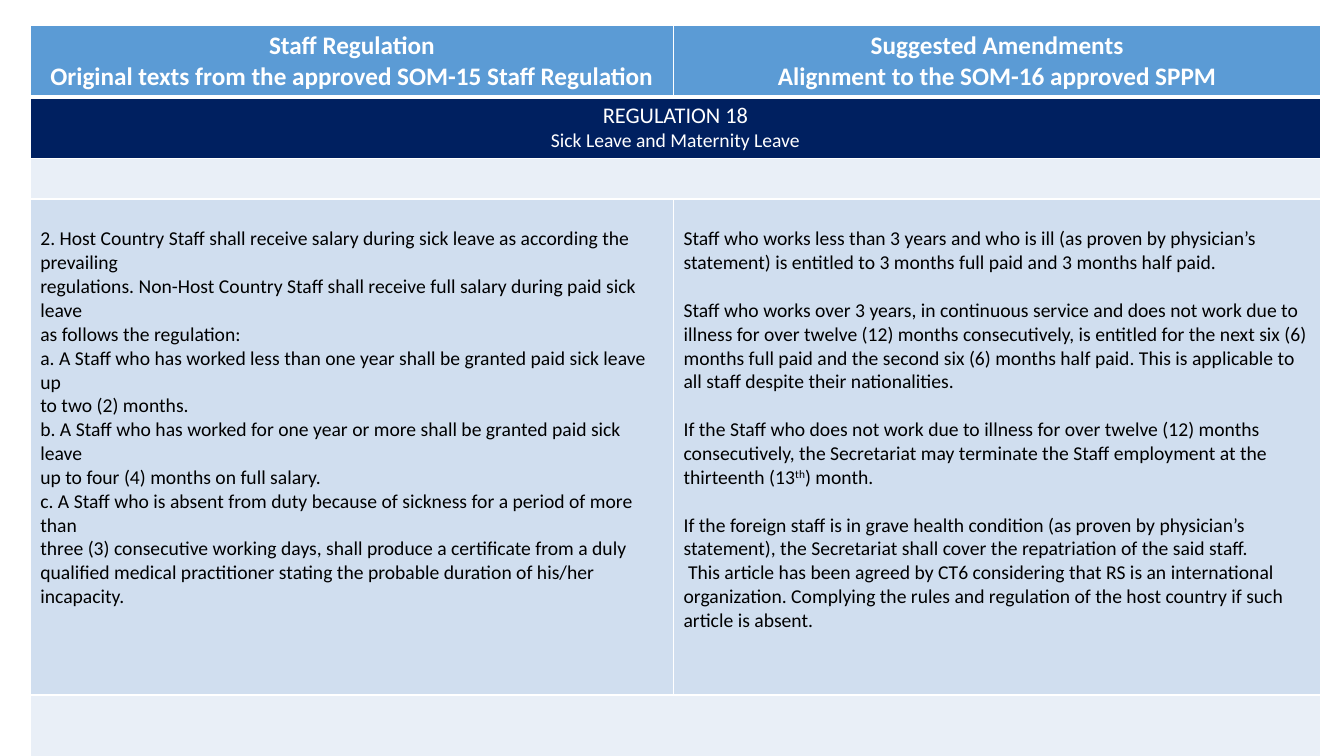
from dataclasses import dataclass
from lxml.etree import SubElement
from pptx import Presentation
from pptx.dml.color import RGBColor
from pptx.enum.text import PP_ALIGN as Align
from pptx.oxml.ns import qn
from pptx.util import Inches, Pt


@dataclass(frozen=True)
class Theme:
    font: str = "Calibri"
    white: str = "FFFFFF"
    black: str = "000000"
    header: str = "5B9BD5"
    banner: str = "002060"
    pale: str = "E9EFF7"
    body: str = "D0DEEF"
    header_size: int = 18
    banner_size: int = 16
    body_size: int = 14
    line_gap: int = 17


theme = Theme()


def write(cell, groups, size=theme.body_size, first_size=None, color=theme.black,
          bold=False, align=Align.LEFT, top=0.05):
    cell.margin_top = Inches(top)
    frame = cell.text_frame
    lines = [(line, group > 0 and place == 0)
             for group, texts in enumerate(groups) for place, line in enumerate(texts)]
    for index, (line, spaced) in enumerate(lines):
        paragraph = frame.add_paragraph() if index else frame.paragraphs[0]
        paragraph.alignment = align
        if spaced:
            paragraph.space_before = Pt(theme.line_gap)
        for part, text in enumerate(line.split("|")):
            run = paragraph.add_run()
            run.text = text
            run.font.name = theme.font
            run.font.size = Pt(first_size if first_size and index == 0 else size)
            run.font.bold = bold
            run.font.color.rgb = RGBColor.from_string(color)
            if part % 2:
                run.font._element.set("baseline", "30000")


def dress(cell, fill, widths):
    properties = cell._tc.get_or_add_tcPr()
    for side, width in widths.items():
        line = SubElement(properties, qn(f"a:ln{side}"), w=str(Pt(width)))
        solid = SubElement(line, qn("a:solidFill"))
        SubElement(solid, qn("a:srgbClr"), val=theme.white)
    cell.fill.solid()
    cell.fill.fore_color.rgb = RGBColor.from_string(fill)


headings = [
    ["Staff Regulation", "Original texts from the approved SOM-15 Staff Regulation"],
    ["Suggested Amendments", "Alignment to the SOM-16 approved SPPM"],
]
regulation = ["REGULATION 18", "Sick Leave and Maternity Leave"]
current_rules = [[
    "2. Host Country Staff shall receive salary during sick leave as according the prevailing",
    "regulations. Non-Host Country Staff shall receive full salary during paid sick leave",
    "as follows the regulation:",
    "a. A Staff who has worked less than one year shall be granted paid sick leave up",
    "to two (2) months.",
    "b. A Staff who has worked for one year or more shall be granted paid sick leave",
    "up to four (4) months on full salary.",
    "c. A Staff who is absent from duty because of sickness for a period of more than",
    "three (3) consecutive working days, shall produce a certificate from a duly",
    "qualified medical practitioner stating the probable duration of his/her incapacity.",
]]
amendments = [
    ["Staff who works less than 3 years and who is ill (as proven by physician’s statement) "
     "is entitled to 3 months full paid and 3 months half paid."],
    ["Staff who works over 3 years, in continuous service and does not work due to illness "
     "for over twelve (12) months consecutively, is entitled for the next six (6) months "
     "full paid and the second six (6) months half paid. This is applicable to all staff "
     "despite their nationalities."],
    ["If the Staff who does not work due to illness for over twelve (12) months "
     "consecutively, the Secretariat may terminate the Staff employment at the thirteenth "
     "(13|th|) month."],
    ["If the foreign staff is in grave health condition (as proven by physician’s "
     "statement), the Secretariat shall cover the repatriation of the said staff.",
     " This article has been agreed by CT6 considering that RS is an international "
     "organization. Complying the rules and regulation of the host country if such article "
     "is absent."],
]
column_widths = [6.38, 6.42]
row_heights = [0.66, 0.56, 0.37, 4.92, 1.14]
row_fills = [theme.header, theme.banner, theme.pale, theme.body, theme.pale]

deck = Presentation()
deck.slide_width = Inches(13.33)
deck.slide_height = Inches(7.5)
slide = deck.slides.add_slide(deck.slide_layouts[6])

comparison = slide.shapes.add_table(
    len(row_heights), len(column_widths), Inches(0.3), Inches(0.25),
    Inches(sum(column_widths)), Inches(sum(row_heights))).table
comparison.horz_banding = False
for column, width in zip(comparison.columns, column_widths):
    column.width = Inches(width)

for index, (row, height, fill) in enumerate(zip(comparison.rows, row_heights, row_fills)):
    row.height = Inches(height)
    widths = {"L": 1, "R": 1, "T": 3 if index == 1 else 1, "B": 3 if index == 0 else 1}
    for cell in row.cells:
        dress(cell, fill, widths)

for full_row in (1, 2, 4):
    comparison.cell(full_row, 0).merge(comparison.cell(full_row, 1))

for column, heading in enumerate(headings):
    write(comparison.cell(0, column), [heading], size=theme.header_size,
          color=theme.white, bold=True, align=Align.CENTER)
write(comparison.cell(1, 0), [regulation], first_size=theme.banner_size,
      color=theme.white, align=Align.CENTER)
for column, rules in enumerate([current_rules, amendments]):
    write(comparison.cell(3, column), rules, top=0.28)

deck.save("out.pptx")
